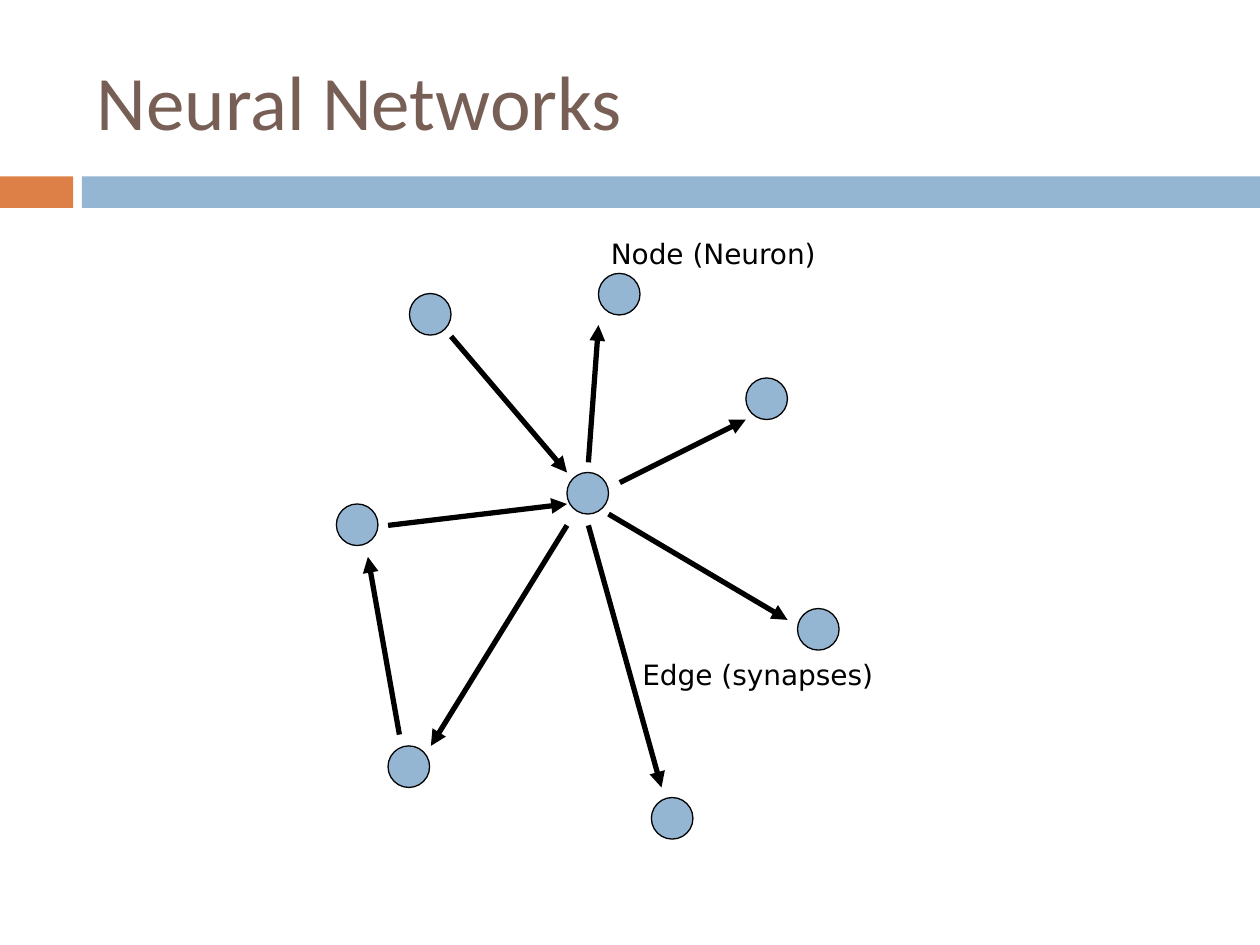
"""Build a slide that shows a neural network as nodes and directed edges."""
from lxml.etree import SubElement
from pptx import Presentation
from pptx.dml.color import RGBColor
from pptx.enum.shapes import MSO_CONNECTOR, MSO_SHAPE
from pptx.enum.text import MSO_ANCHOR
from pptx.oxml.ns import qn
from pptx.util import Inches, Pt

BLUE = RGBColor(0x94, 0xB6, 0xD2)
ORANGE = RGBColor(0xDD, 0x80, 0x47)
BROWN = RGBColor(0x77, 0x5F, 0x55)
BLACK = RGBColor(0, 0, 0)

SIZE = 0.33
NODES = [(4.75, 2.17), (3.25, 2.33), (6.33, 4.83), (5.92, 3),
         (4.5, 3.75), (5.17, 6.33), (2.67, 4), (3.08, 5.92)]
EDGES = [((3.58, 2.67), (4.5, 3.75)), ((3.08, 4.17), (4.5, 4)),
         ((4.67, 3.67), (4.75, 2.58)), ((4.92, 3.83), (5.92, 3.33)),
         ((4.83, 4.08), (6.25, 4.92)), ((4.67, 4.17), (5.25, 6.25)),
         ((4.5, 4.17), (3.42, 5.92)), ((3.17, 5.83), (2.92, 4.42))]
LABELS = [("Node (Neuron)", (4.75, 1.83, 2.17, 0.37)),
          ("Edge (synapses)", (5, 5.17, 2.67, 0.37))]


def add_form(shapes, kind, box, fill, line=None):
    form = shapes.add_shape(kind, *map(Inches, box))
    form.shadow.inherit = False
    form.fill.solid()
    form.fill.fore_color.rgb = fill
    if line is None:
        form.line.fill.background()
    else:
        form.line.color.rgb = line
        form.line.width = Pt(0.75)


def add_edge(shapes, start, end):
    edge = shapes.add_connector(MSO_CONNECTOR.STRAIGHT, *map(Inches, start + end))
    edge.line.color.rgb = BLACK
    edge.line.width = Pt(3)
    SubElement(edge.line._get_or_add_ln(), qn("a:tailEnd"), type="triangle")
    SubElement(edge._element.spPr, qn("a:effectLst"))


def add_text(shapes, text, box, size=16, font="DejaVu Sans", color=BLACK,
             anchor=MSO_ANCHOR.TOP):
    frame = shapes.add_textbox(*map(Inches, box)).text_frame
    frame.word_wrap = True
    frame.vertical_anchor = anchor
    run = frame.paragraphs[0].add_run()
    run.text = text
    run.font.size = Pt(size)
    run.font.name = font
    run.font.color.rgb = color


def add_graph(shapes):
    graph = shapes.add_group_shape().shapes
    for left, top in NODES:
        add_form(graph, MSO_SHAPE.OVAL, (left, top, SIZE, SIZE), BLUE, BLACK)
    for start, end in EDGES:
        add_edge(graph, start, end)
    for text, box in LABELS:
        add_text(graph, text, box)


def main():
    deck = Presentation()
    deck.slide_width, deck.slide_height = Inches(10), Inches(7.5)
    shapes = deck.slides.add_slide(deck.slide_layouts[6]).shapes
    add_form(shapes, MSO_SHAPE.RECTANGLE, (0, 1.4, 0.58, 0.25), ORANGE)
    add_form(shapes, MSO_SHAPE.RECTANGLE, (0.65, 1.4, 9.35, 0.25), BLUE)
    add_text(shapes, "Neural Networks", (0.67, 0.25, 8.92, 1.08), size=44,
             font="Calibri", color=BROWN, anchor=MSO_ANCHOR.MIDDLE)
    add_graph(shapes)
    deck.save("out.pptx")


if __name__ == "__main__":
    main()
